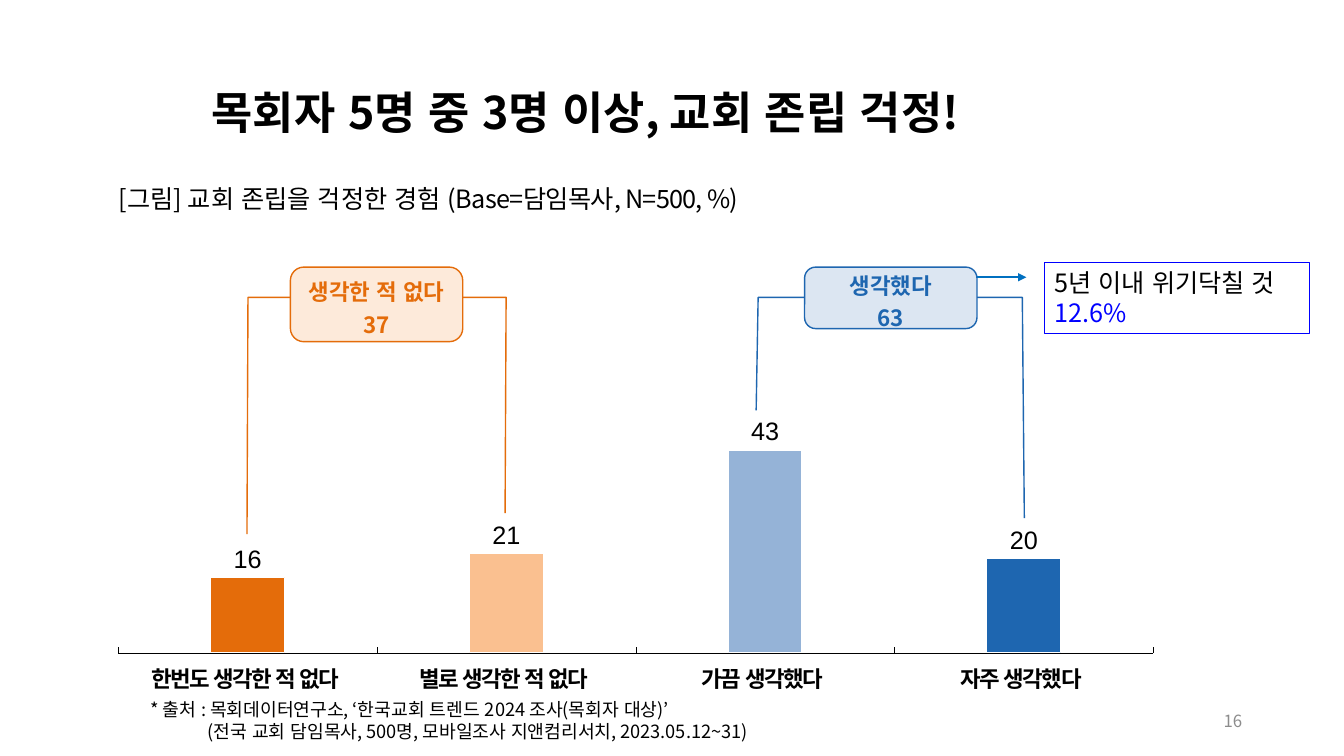
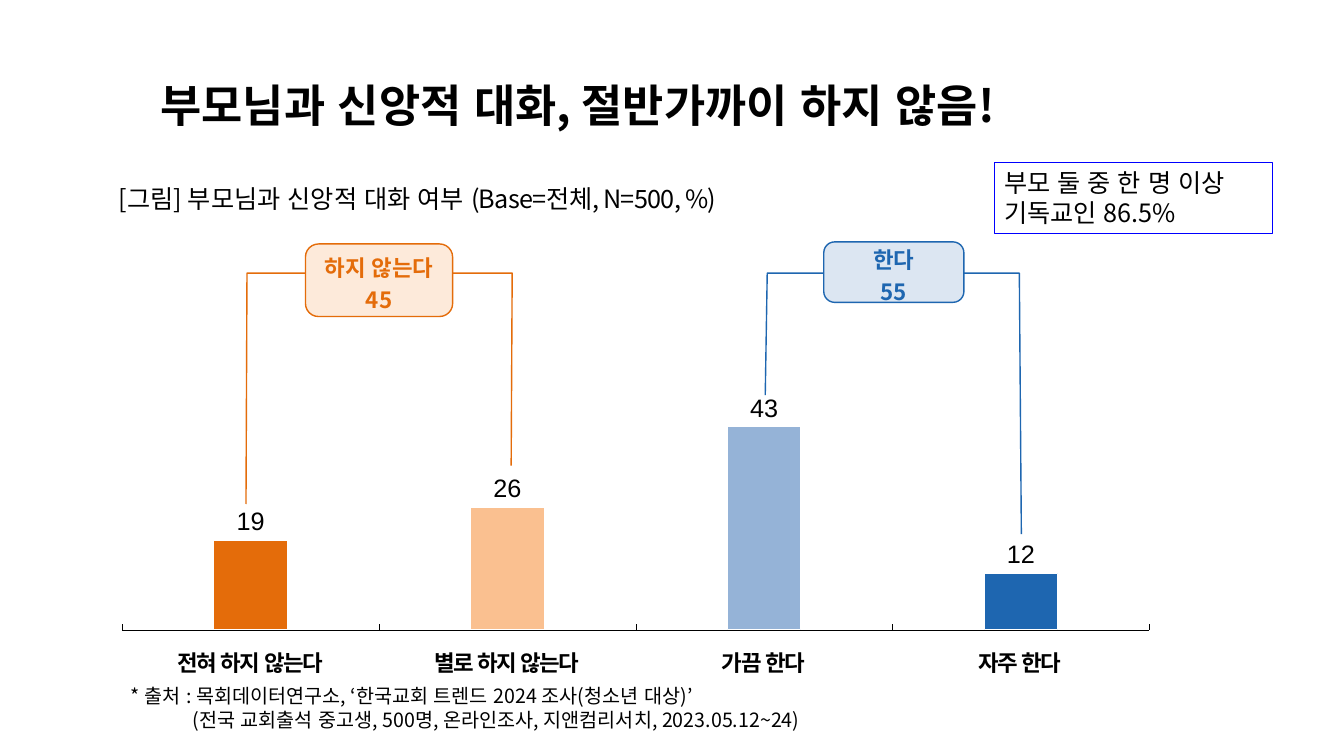
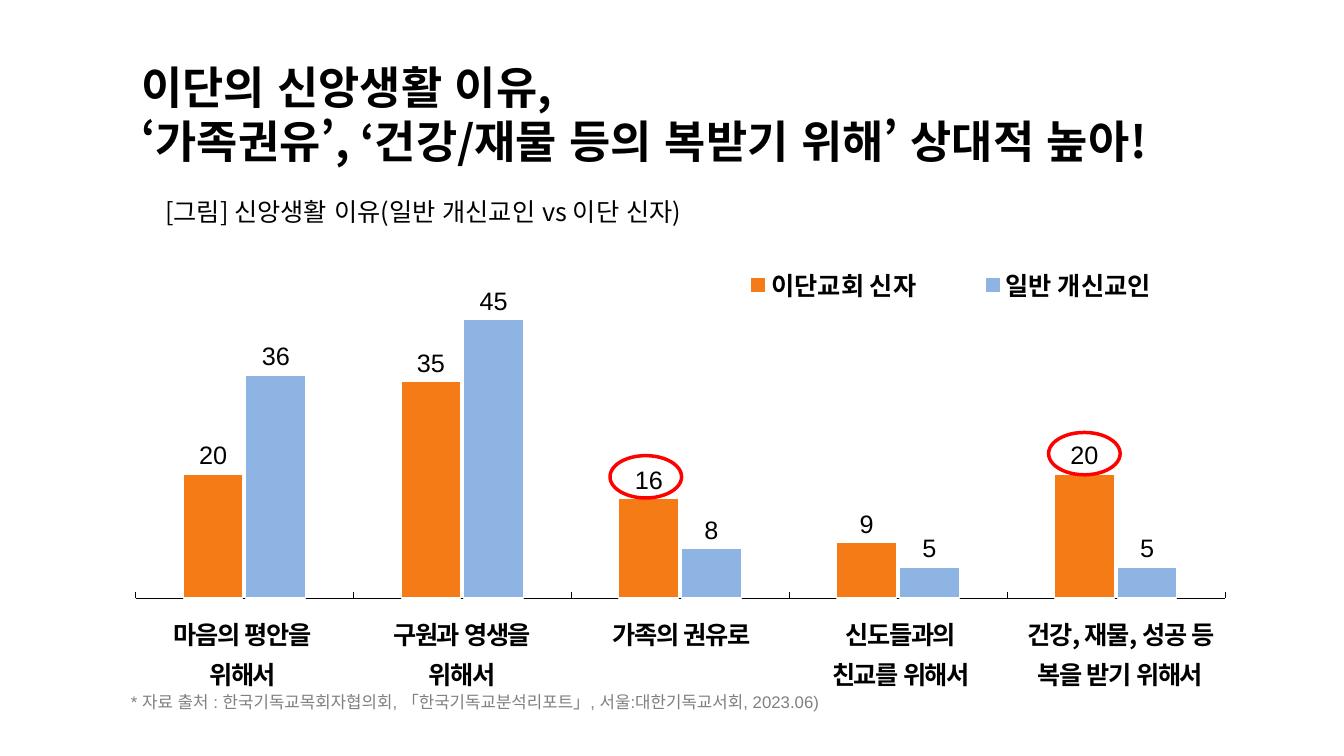
from lxml import etree
from pptx import Presentation
from pptx.chart.data import CategoryChartData
from pptx.dml.color import RGBColor
from pptx.enum.chart import XL_CHART_TYPE as ChartType, XL_LABEL_POSITION as LabelPos
from pptx.enum.chart import XL_LEGEND_POSITION as LegendPos, XL_TICK_LABEL_POSITION as TickLabel
from pptx.enum.chart import XL_TICK_MARK as Tick
from pptx.enum.shapes import MSO_CONNECTOR as Connector, MSO_SHAPE as Shape
from pptx.enum.text import MSO_ANCHOR as Anchor, MSO_AUTO_SIZE as AutoSize, PP_ALIGN as Align
from pptx.oxml.ns import qn
from pptx.util import Inches, Pt

COLORS = {
    "text": "000000", "grey": "808080", "page": "8C8C8C", "white": "FFFFFF",
    "orange": "E46C0A", "peach": "FAC090", "cream": "FDEADA",
    "blue": "1E66B0", "sky": "95B3D7", "ice": "DCE6F2",
    "arrow": "0070C0", "frame": "0000FF", "ring": "FF0000",
    "sect": "F57B17", "protestant": "8EB4E3",
}
KOREAN = "Noto Sans CJK KR"
LATIN = "Arial"
NO_TABLE_STYLE = "{2D5ABB26-0587-4C30-8999-92F81FD0307C}"
BAR_COLORS = ("orange", "peach", "sky", "blue")


def rgb(name):
    """Return the named palette colour."""
    return RGBColor.from_string(COLORS[name])


def add_run(paragraph, text, size, color="text", bold=False, spacing=0, latin=KOREAN):
    """Add one formatted Korean run with Latin and East Asian fonts."""
    run = paragraph.add_run()
    run.text = text
    run.font.size, run.font.bold, run.font.name = Pt(size), bold, latin
    run.font.color.rgb = rgb(color)
    props = run._r.get_or_add_rPr()
    props.set("lang", "ko-KR")
    if spacing:
        props.set("spc", str(int(spacing * 100)))
    etree.SubElement(props, qn("a:ea")).set("typeface", KOREAN)


def write(frame, lines, size, color="text", bold=False, latin=KOREAN,
          align=Align.LEFT, leading=1.2, indent=0):
    """Fill a text frame; each line is a list of (text, overrides) runs."""
    frame.word_wrap = True
    frame.auto_size = AutoSize.NONE
    for index, runs in enumerate(lines):
        paragraph = frame.add_paragraph() if index else frame.paragraphs[0]
        paragraph.alignment = align
        paragraph.line_spacing = Pt(round(size * leading, 1))
        if index and indent:
            paragraph._p.get_or_add_pPr().set("marL", str(Inches(indent)))
        for text, changes in runs:
            style = {"size": size, "color": color, "bold": bold, "latin": latin}
            add_run(paragraph, text, **{**style, **changes})


def add_text(slide, box, lines, size, **style):
    """Add a text box."""
    frame = slide.shapes.add_textbox(*map(Inches, box)).text_frame
    write(frame, lines, size, **style)
    return frame


def set_title(slide, box, *lines):
    """Place and format the title placeholder."""
    title = slide.shapes.title
    title.left, title.top, title.width, title.height = map(Inches, box)
    title.text_frame.vertical_anchor = Anchor.TOP
    write(title.text_frame, [[(line, {})] for line in lines], 32, bold=True)


def add_outline(slide, kind, box, line, width, fill=None):
    """Add an outlined preset shape with an optional fill."""
    shape = slide.shapes.add_shape(kind, *map(Inches, box))
    shape.shadow.inherit = False
    if fill:
        shape.fill.solid()
        shape.fill.fore_color.rgb = rgb(fill)
    else:
        shape.fill.background()
    shape.line.color.rgb, shape.line.width = rgb(line), Pt(width)
    return shape


def add_note(slide, box, lines):
    """Add the framed remark."""
    frame = add_outline(slide, Shape.RECTANGLE, box, "frame", 0.75).text_frame
    frame.vertical_anchor = Anchor.TOP
    write(frame, lines, 18)


def add_group(slide, badge, label, total, points, color, fill):
    """Draw a bracket over two bars and the badge with their total."""
    corners = [(Inches(x), Inches(y)) for x, y in points]
    builder = slide.shapes.build_freeform(*corners[0])
    builder.add_line_segments(corners[1:], close=False)
    bracket = builder.convert_to_shape()
    bracket.shadow.inherit = False
    bracket.fill.background()
    bracket.line.color.rgb, bracket.line.width = rgb(color), Pt(1)
    shape = add_outline(slide, Shape.ROUNDED_RECTANGLE, badge, color, 1, fill)
    shape.adjustments[0] = 0.18
    frame = shape.text_frame
    frame.margin_left = frame.margin_right = frame.margin_bottom = 0
    frame.margin_top = Inches(0.02)
    frame.vertical_anchor = Anchor.MIDDLE
    write(frame, [[(label, {})], [(total, {})]], 16, color=color, bold=True,
          align=Align.CENTER, leading=1.44)


def set_layout(parent, index, x, y, w, h, inner=False):
    """Give a chart part a manual layout in fractions of the chart."""
    for old in parent.findall(qn("c:layout")):
        parent.remove(old)
    layout = etree.Element(qn("c:layout"))
    manual = etree.SubElement(layout, qn("c:manualLayout"))
    values = [("layoutTarget", "inner")] if inner else []
    values += [("xMode", "edge"), ("yMode", "edge"), ("x", x), ("y", y), ("w", w), ("h", h)]
    for tag, value in values:
        etree.SubElement(manual, qn(f"c:{tag}")).set("val", str(value))
    parent.insert(index, layout)


def paint_bar(target, color):
    """Fill a series or point and give it a white edge."""
    target.format.fill.solid()
    target.format.fill.fore_color.rgb = rgb(color)
    target.format.line.color.rgb = rgb("white")
    target.format.line.width = Pt(0.75)


def add_bars(slide, box, series, colors, top, gap):
    """Add a column chart without axis labels."""
    data = CategoryChartData(number_format="0")
    data.categories = [str(n + 1) for n in range(len(series[0][1]))]
    for name, values in series:
        data.add_series(name, values)
    chart = slide.shapes.add_chart(ChartType.COLUMN_CLUSTERED, *map(Inches, box), data).chart
    chart.has_title = chart.has_legend = False
    chart.font.name, chart.font.size, chart.font.bold = LATIN, Pt(9), True
    chart.font.color.rgb = rgb("text")
    set_layout(chart._chartSpace.xpath(".//c:plotArea")[0], 0, 0.02, 0.092, 0.962, 0.878, True)
    plot = chart.plots[0]
    plot.gap_width, plot.overlap, plot.vary_by_categories = gap, -5, False
    plot.has_data_labels = True
    labels = plot.data_labels
    labels.show_value, labels.position = True, LabelPos.OUTSIDE_END
    labels.number_format, labels.number_format_is_linked = "0", False
    labels.font.name, labels.font.size, labels.font.bold = LATIN, Pt(18), False
    labels.font.color.rgb = rgb("text")
    values, answers = chart.value_axis, chart.category_axis
    values.minimum_scale, values.maximum_scale = 0, top
    values.has_major_gridlines = values.visible = False
    answers.tick_label_position = TickLabel.NONE
    answers.major_tick_mark, answers.minor_tick_mark = Tick.INSIDE, Tick.NONE
    answers.format.line.color.rgb = rgb("text")
    answers.format.line.width = Pt(0.25)
    for bars, color in zip(plot.series, colors):
        bars.invert_if_negative = False
        paint_bar(bars, color)
    return chart


def add_answers(slide, box, answers, size):
    """Add the one-row table naming the bars."""
    frame = slide.shapes.add_table(1, len(answers), *map(Inches, box))
    table = frame.table
    table.first_row = table.horz_banding = False
    frame._element.xpath(".//a:tableStyleId")[0].text = NO_TABLE_STYLE
    for cell, answer in zip(table.rows[0].cells, answers):
        cell.fill.background()
        cell.margin_left = cell.margin_right = cell.margin_top = Inches(0.01)
        cell.margin_bottom = 0
        cell.vertical_anchor = Anchor.TOP
        for index, line in enumerate(answer.split("\n")):
            text = cell.text_frame
            paragraph = text.add_paragraph() if index else text.paragraphs[0]
            paragraph.alignment, paragraph.line_spacing = Align.CENTER, 1.1
            add_run(paragraph, line, size, bold=True, spacing=-1)


def add_survey(slide, figure, base, chart_box, values, table_box, answers):
    """Add the caption, four coloured bars and answers of a survey."""
    add_text(slide, (1.08, 1.77, 10.12, 0.4),
             [[(f"[그림] {figure} ", {}), (f"(Base={base}, N=500, %)", {"spacing": -0.5})]], 18)
    chart = add_bars(slide, chart_box, [("Series 1", values)], ["sky"], 70, 250)
    for index, color in enumerate(BAR_COLORS):
        paint_bar(chart.plots[0].series[0].points[index], color)
    add_answers(slide, table_box, answers, 16)


def add_source(slide, box, lines, size, indent):
    """Add the two-line source with an indented second line."""
    add_text(slide, box, [[(line, {})] for line in lines], size, indent=indent)


def add_arrow(slide, x1, x2, y):
    """Add a horizontal arrow."""
    arrow = slide.shapes.add_connector(Connector.STRAIGHT, *map(Inches, (x1, y, x2, y)))
    arrow.line.color.rgb, arrow.line.width = rgb("arrow"), Pt(1.25)
    etree.SubElement(arrow.get_or_add_ln(), qn("a:tailEnd")).set("type", "triangle")
    etree.SubElement(arrow._element.spPr, qn("a:effectLst"))


def build_pastors(slide):
    """Build the slide on pastors' worries."""
    set_title(slide, (2, 0.79, 9.3, 0.64), "목회자 5명 중 3명 이상, 교회 존립 걱정!")
    add_survey(slide, "교회 존립을 걱정한 경험", "담임목사",
               (0.96, 2.86, 10.67, 3.73), (16, 21, 43, 20), (1.15, 6.52, 10.26, 0.47),
               ("한번도 생각한 적 없다", "별로 생각한 적 없다", "가끔 생각했다", "자주 생각했다"))
    add_group(slide, (2.88, 2.65, 1.71, 0.74), "생각한 적 없다", "37",
              [(2.45, 5.3), (2.46, 2.95), (5.02, 2.95), (5.01, 5.09)], "orange", "cream")
    add_group(slide, (7.98, 2.65, 1.71, 0.61), "생각했다", "63",
              [(7.5, 4.07), (7.52, 2.95), (10.14, 2.95), (10.16, 5.14)], "blue", "ice")
    add_arrow(slide, 9.69, 10.18, 2.75)
    add_note(slide, (10.36, 2.6, 2.63, 0.71),
             [[("5년 이내 위기닥칠 것", {})], [("12.6%", {"color": "frame"})]])
    add_source(slide, (1.39, 6.88, 9.79, 0.54),
               ("* 출처 : 목회데이터연구소, ‘한국교회 트렌드 2024 조사(목회자 대상)’",
                "(전국 교회 담임목사, 500명, 모바일조사 지앤컴리서치, 2023.05.12~31)"), 13, 0.57)
    number = add_text(slide, (9.42, 6.95, 3, 0.4), [[("16", {})]], 12,
                      color="page", align=Align.RIGHT)
    number.vertical_anchor = Anchor.MIDDLE


def build_parents(slide):
    """Build the slide on talking about faith with parents."""
    set_title(slide, (1.49, 0.72, 10.61, 0.64), "부모님과 신앙적 대화, 절반가까이 하지 않음!")
    add_survey(slide, "부모님과 신앙적 대화 여부", "전체",
               (1, 2.63, 10.59, 3.73), (19, 26, 43, 12), (1.21, 6.36, 10.18, 0.47),
               ("전혀 하지 않는다", "별로 하지 않는다", "가끔 한다", "자주 한다"))
    add_group(slide, (3.03, 2.42, 1.46, 0.72), "하지 않는다", "45",
              [(2.44, 5), (2.45, 2.71), (5.08, 2.71), (5.07, 4.62)], "orange", "cream")
    add_group(slide, (8.17, 2.4, 1.39, 0.6), "한다", "55",
              [(7.59, 3.92), (7.61, 2.71), (10.11, 2.71), (10.13, 5.3)], "blue", "ice")
    add_note(slide, (9.86, 1.61, 2.76, 0.71),
             [[("부모 둘 중 한 명 이상", {})], [("기독교인 86.5%", {})]])
    add_source(slide, (1.2, 6.74, 9.69, 0.57),
               ("* 출처 : 목회데이터연구소, ‘한국교회 트렌드 2024 조사(청소년 대상)’",
                "(전국 교회출석 중고생, 500명, 온라인조사, 지앤컴리서치, 2023.05.12~24)"), 14, 0.61)


def build_reasons(slide):
    """Build the slide comparing reasons for religious life."""
    set_title(slide, (1.3, 0.54, 11.9, 1.18), "이단의 신앙생활 이유,",
              "‘가족권유’, ‘건강/재물 등의 복받기 위해’ 상대적 높아!")
    add_text(slide, (1.2, 6.81, 10.45, 0.3),
             [[("* 자료 출처 : 한국기독교목회자협의회, 「한국기독교분석리포트」, "
                "서울:대한기독교서회, 2023.06)", {})]], 12, color="grey", latin=LATIN)
    add_text(slide, (1.54, 1.9, 5.82, 0.71),
             [[("[그림] 신앙생활 이유(일반 개신교인 vs 이단 신자)", {})]], 18)
    add_answers(slide, (1.32, 6.06, 10.88, 0.67),
                ("마음의 평안을\n위해서", "구원과 영생을\n위해서", "가족의 권유로",
                 "신도들과의\n친교를 위해서", "건강, 재물, 성공 등 복을 받기 위해서"), 18)
    chart = add_bars(slide, (1.12, 1.86, 11.23, 4.2),
                     [("이단교회 신자", (20, 35, 16, 9, 20)), ("일반 개신교인", (36, 45, 8, 5, 5))],
                     ("sect", "protestant"), 60, 160)
    chart.has_legend = True
    legend = chart.legend
    legend.position, legend.include_in_layout = LegendPos.RIGHT, False
    legend.font.name, legend.font.size, legend.font.bold = KOREAN, Pt(18), True
    legend.font.color.rgb = rgb("text")
    set_layout(legend._element, 1, 0.51, 0.17, 0.46, 0.12)
    for left, top in ((10.4, 4.29), (6.05, 4.52)):
        add_outline(slide, Shape.OVAL, (left, top, 0.71, 0.42), "ring", 2.5)


def main():
    """Build and save the presentation."""
    deck = Presentation()
    deck.slide_width, deck.slide_height = Inches(13.33), Inches(7.5)
    for build in (build_pastors, build_parents, build_reasons):
        build(deck.slides.add_slide(deck.slide_layouts[5]))
    deck.save("out.pptx")


if __name__ == "__main__":
    main()
